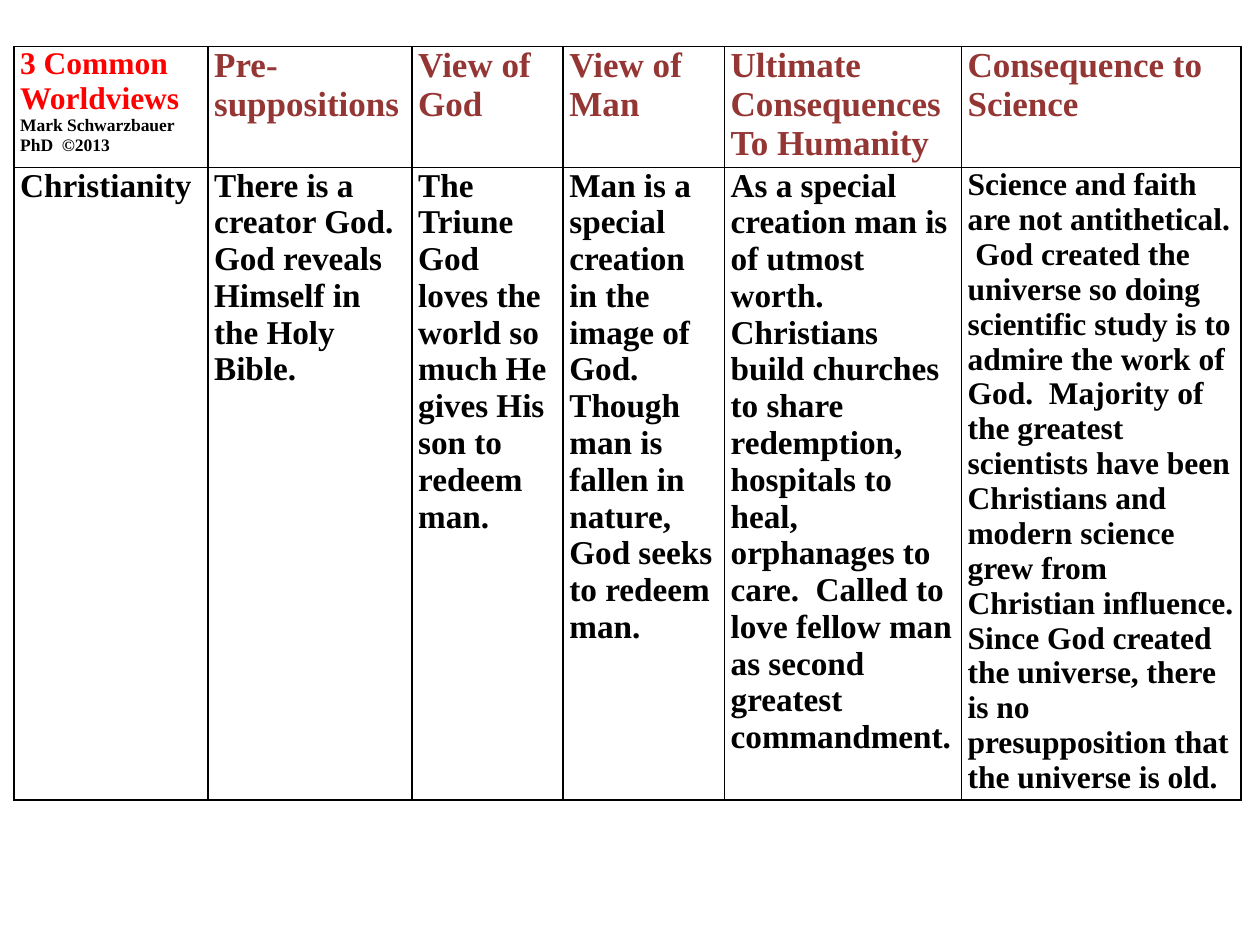
from dataclasses import dataclass

from pptx import Presentation
from pptx import util as u
from pptx.dml.color import RGBColor
from pptx.oxml import parse_xml
from pptx.oxml.ns import nsdecls


@dataclass(frozen=True)
class Theme:
    font: str = "Times New Roman"
    title_color: str = "FF0000"
    heading_color: str = "943634"
    ink: str = "000000"
    title_size: int = 18
    credit_size: int = 10
    heading_size: int = 20
    body_size: int = 19
    long_body_size: int = 18
    border_width: int = 1


THEME = Theme()
TITLE = (THEME.title_size, THEME.title_color)
CREDIT = (THEME.credit_size, THEME.ink)
HEADING = (THEME.heading_size, THEME.heading_color)
BODY = (THEME.body_size, THEME.ink)
LONG_BODY = (THEME.long_body_size, THEME.ink)

COLUMN_WIDTHS = [1.54, 1.62, 1.2, 1.28, 1.88, 2.22]
ROW_HEIGHTS = [0.96, 5.02]
CELL_FORMAT = {
    "margin_left": u.Inches(0.05),
    "margin_right": u.Inches(0.05),
    "margin_top": 0,
    "margin_bottom": 0,
}

# Each cell is a list of paragraphs: (text, style).
HEADINGS = [
    [("3 Common Worldviews", TITLE), ("Mark Schwarzbauer PhD  ©2013", CREDIT)],
    [("Pre-suppositions", HEADING)],
    [("View of God", HEADING)],
    [("View of Man", HEADING)],
    [("Ultimate Consequences", HEADING), ("To Humanity", HEADING)],
    [("Consequence to Science", HEADING)],
]
CHRISTIANITY = [
    [("Christianity", BODY)],
    [("There is a creator God.", BODY),
     ("God reveals Himself in the Holy Bible.", BODY)],
    [("The Triune God loves the world so much He gives His son to redeem man.", BODY)],
    [("Man is a special creation in the image of God.  Though man is fallen in "
      "nature, God seeks to redeem man.", BODY)],
    [("As a special creation man is of utmost worth.  Christians build churches "
      "to share redemption, hospitals to heal, orphanages to care.  Called to "
      "love fellow man as second greatest commandment.", BODY)],
    [("Science and faith are not antithetical.  God created the universe so "
      "doing scientific study is to admire the work of God.  Majority of the "
      "greatest scientists have been Christians and modern science grew from "
      "Christian influence.", LONG_BODY),
     ("Since God created the universe, there is no presupposition that the "
      "universe is old.", LONG_BODY)],
]


def apply_format(target, values):
    for name, value in values.items():
        setattr(target, name, value)


def add_borders(cell):
    properties = cell._tc.get_or_add_tcPr()
    for position, side in enumerate(("lnL", "lnR", "lnT", "lnB")):
        properties.insert(position, parse_xml(
            f'<a:{side} {nsdecls("a")} w="{u.Pt(THEME.border_width)}">'
            f'<a:solidFill><a:srgbClr val="{THEME.ink}"/></a:solidFill></a:{side}>'))


def write_paragraph(paragraph, wording, style):
    size, color = style
    run = paragraph.add_run()
    run.text = wording
    apply_format(run.font, {"name": THEME.font, "size": u.Pt(size), "bold": True})
    run.font.color.rgb = RGBColor.from_string(color)


def fill_cell(cell, paragraphs):
    apply_format(cell, CELL_FORMAT)
    cell.fill.background()
    add_borders(cell)
    frame = cell.text_frame
    for index, (wording, style) in enumerate(paragraphs):
        paragraph = frame.add_paragraph() if index else frame.paragraphs[0]
        write_paragraph(paragraph, wording, style)


def add_worldview_table(slide, rows):
    table = slide.shapes.add_table(
        len(rows), len(COLUMN_WIDTHS), u.Inches(0.11), u.Inches(0.37),
        u.Inches(sum(COLUMN_WIDTHS)), u.Inches(sum(ROW_HEIGHTS))).table
    apply_format(table, {"first_row": False, "horz_banding": False})
    for column, width in zip(table.columns, COLUMN_WIDTHS):
        column.width = u.Inches(width)
    for row, height, contents in zip(table.rows, ROW_HEIGHTS, rows):
        row.height = u.Inches(height)
        for cell, paragraphs in zip(row.cells, contents):
            fill_cell(cell, paragraphs)


def main():
    deck = Presentation()
    apply_format(deck, {"slide_width": u.Inches(10), "slide_height": u.Inches(7.5)})
    slide = deck.slides.add_slide(deck.slide_layouts[6])
    add_worldview_table(slide, [HEADINGS, CHRISTIANITY])
    deck.save("out.pptx")


if __name__ == "__main__":
    main()
